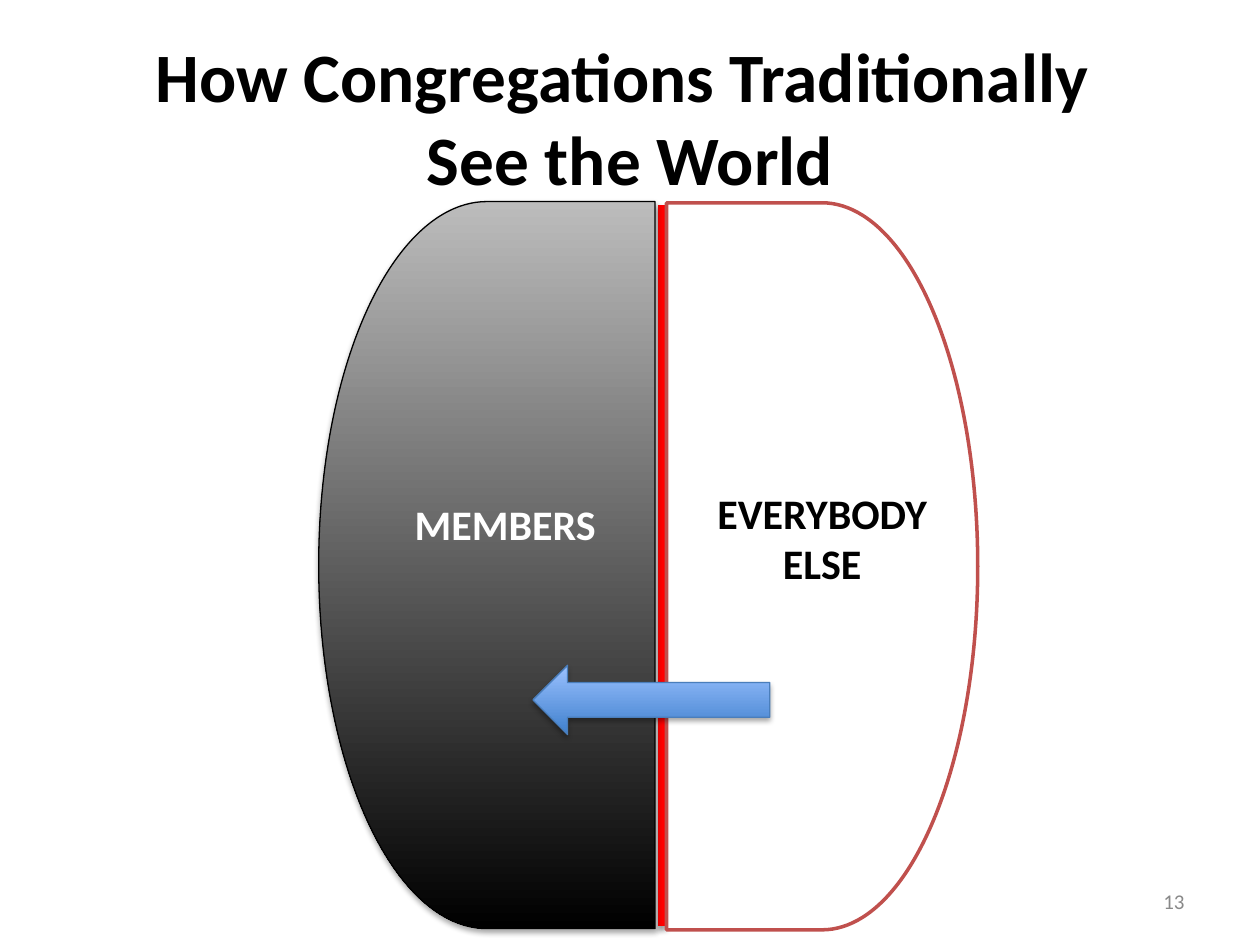
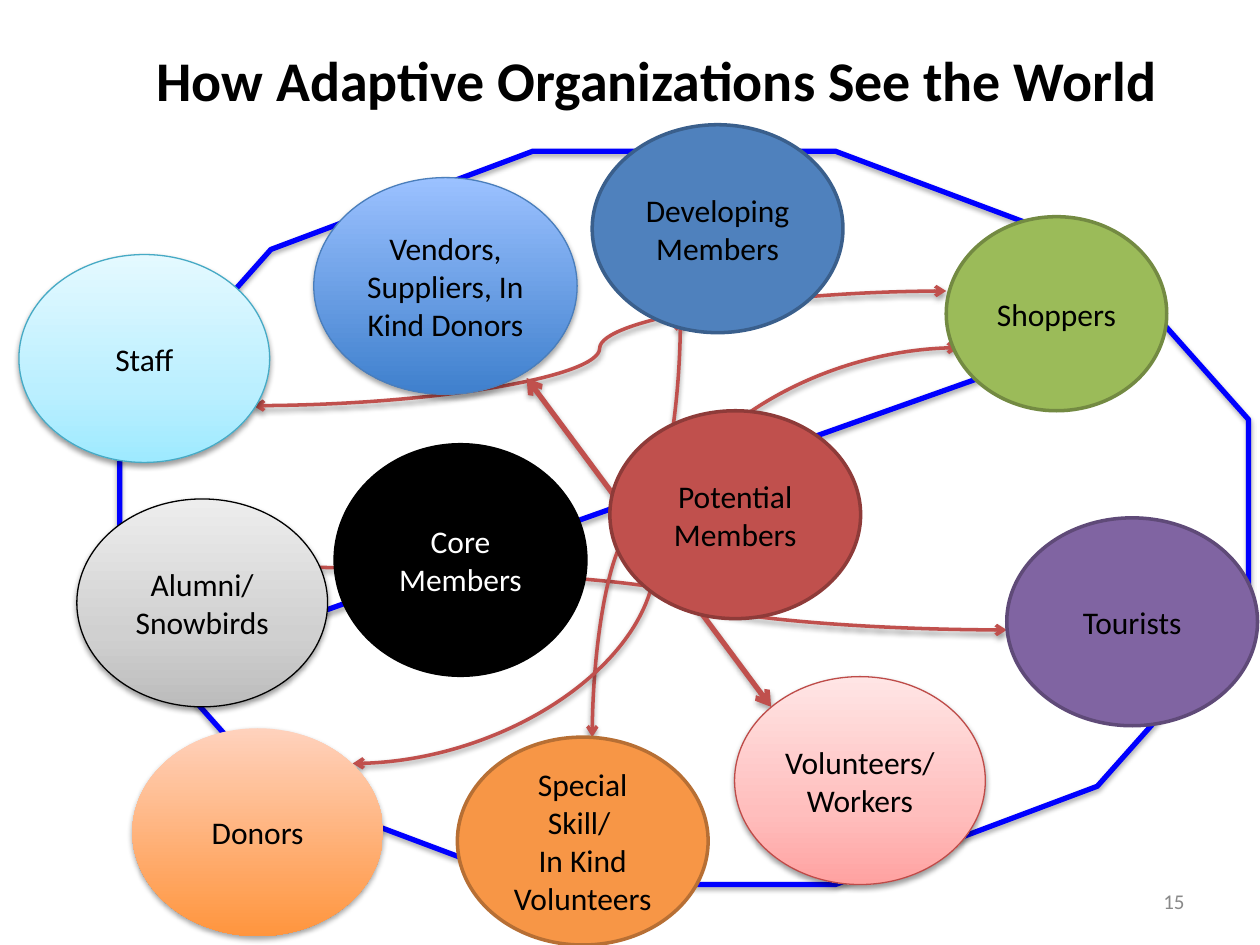
from lxml.etree import SubElement as Sub
from pptx import Presentation
from pptx.dml.color import RGBColor as RGB
from pptx.enum.shapes import MSO_CONNECTOR as Link, MSO_SHAPE as Kind
from pptx.enum.text import MSO_ANCHOR as Anchor, MSO_AUTO_SIZE as Auto, PP_ALIGN as Align
from pptx.oxml.ns import qn
from pptx.util import Inches, Pt

BLACK = RGB(0x00, 0x00, 0x00)
WHITE = RGB(0xFF, 0xFF, 0xFF)
RED = RGB(0xFF, 0x00, 0x00)
BLUE = RGB(0x00, 0x00, 0xFF)
GREY = RGB(0x89, 0x89, 0x89)
SILVER = RGB(0xBC, 0xBC, 0xBC)
BRICK = RGB(0xC0, 0x50, 0x4D)
BRICK_EDGE = RGB(0x8E, 0x3B, 0x39)
STEEL = RGB(0x4F, 0x81, 0xBD)
STEEL_EDGE = RGB(0x3A, 0x5F, 0x8C)
GREEN = RGB(0x9B, 0xBB, 0x59)
GREEN_EDGE = RGB(0x73, 0x8A, 0x42)
PURPLE = RGB(0x80, 0x64, 0xA2)
PURPLE_EDGE = RGB(0x5F, 0x4A, 0x78)
ORANGE = RGB(0xF7, 0x96, 0x46)
ORANGE_EDGE = RGB(0xB7, 0x6F, 0x34)
SKY_EDGE = RGB(0x4A, 0x7E, 0xBB)
AQUA_EDGE = RGB(0x46, 0xAA, 0xC5)
ROSE_EDGE = RGB(0xBE, 0x4B, 0x48)

SKY = [(0, RGB(0x9B, 0xC1, 0xFF)), (100, RGB(0x3F, 0x80, 0xCD))]
NIGHT = [(0, SILVER), (100, BLACK)]
PEACH = [(0, RGB(0xFF, 0xD2, 0xBD)), (100, RGB(0xFF, 0x95, 0x3E))]
ROSE = [(0, RGB(0xFF, 0xE5, 0xE5)), (65, RGB(0xFF, 0xBE, 0xBD)), (100, RGB(0xFF, 0xA2, 0xA1))]
AQUA = [(0, RGB(0xE4, 0xF9, 0xFF)), (65, RGB(0xBB, 0xEF, 0xFF)), (100, RGB(0x9E, 0xEA, 0xFF))]
ASH = [(0, RGB(0xED, 0xED, 0xED)), (65, RGB(0xD0, 0xD0, 0xD0)), (100, SILVER)]

SOFT = (38, 1.6)
FIRM = (35, 1.8)


class Deck:
    """Holds the style and the current slide, and draws each kind of element."""

    font = "Calibri"

    def __init__(self):
        self.show = Presentation()
        self.show.slide_width, self.show.slide_height = Inches(10), Inches(7.5)

    def start(self, title, box, size, number):
        self.slide = self.show.slides.add_slide(self.show.slide_layouts[5])
        head = self.slide.shapes.title
        head.left, head.top, head.width, head.height = map(Inches, box)
        self.letter(head, title, size, bold=True)
        head.text_frame.auto_size = Auto.NONE
        self.label(number, (7.17, 6.95, 2.33, 0.4), 12, GREY, Align.RIGHT, False, Anchor.MIDDLE)

    def letter(self, shape, text, size, color=BLACK, align=Align.CENTER, bold=False, anchor=Anchor.MIDDLE):
        frame = shape.text_frame
        frame.text = text
        frame.word_wrap = True
        frame.vertical_anchor = anchor
        for para in frame.paragraphs:
            para.alignment = align
            for run in para.runs:
                run.font.name, run.font.size, run.font.bold = self.font, Pt(size), bold
                run.font.color.rgb = color

    def label(self, text, box, size, color, align=Align.CENTER, bold=True, anchor=Anchor.TOP):
        self.letter(self.slide.shapes.add_textbox(*map(Inches, box)), text, size, color, align, bold, anchor)

    def shade(self, props, shadow):
        effects = Sub(props, qn("a:effectLst"))
        if shadow:
            alpha, drop = shadow
            outer = Sub(effects, qn("a:outerShdw"), blurRad=str(Pt(3.1)), dist=str(Pt(drop)),
                        dir="5400000", rotWithShape="0")
            tint = Sub(outer, qn("a:srgbClr"), val=str(BLACK))
            Sub(tint, qn("a:alpha"), val=str(alpha * 1000))

    def blend(self, fill, props, stops):
        fill.gradient()
        fill.gradient_angle = 270
        group = props.find(qn("a:gradFill")).find(qn("a:gsLst"))
        for old in list(group):
            group.remove(old)
        for place, color in stops:
            stop = Sub(group, qn("a:gs"), pos=str(place * 1000))
            Sub(stop, qn("a:srgbClr"), val=str(color))

    def shape(self, kind, box, fill=None, edge=None, width=2, shadow=None, flip=False):
        item = self.slide.shapes.add_shape(kind, *map(Inches, box))
        props = item._element.spPr
        if fill is None:
            item.fill.background()
        elif isinstance(fill, list):
            self.blend(item.fill, props, fill)
        else:
            item.fill.solid()
            item.fill.fore_color.rgb = fill
        if edge is None:
            item.line.fill.background()
        else:
            item.line.color.rgb, item.line.width = edge, Pt(width)
        if flip:
            props.find(qn("a:xfrm")).set("flipH", "1")
        self.shade(props, shadow)
        return item

    def oval(self, text, box, fill, edge=None, width=2, shadow=None, color=BLACK):
        self.letter(self.shape(Kind.OVAL, box, fill, edge, width, shadow), text, 18, color)

    def line(self, ends, color, width, shadow=SOFT, kind=Link.STRAIGHT, arrows=False, bend=None, turn=0):
        item = self.slide.shapes.add_connector(kind, *map(Inches, ends))
        item.line.color.rgb, item.line.width = color, Pt(width)
        props = item._element.spPr
        if arrows:
            for tip in ("a:headEnd", "a:tailEnd"):
                Sub(props.find(qn("a:ln")), qn(tip), type="arrow")
        if bend:
            shape = props.find(qn("a:prstGeom"))
            guides = shape.find(qn("a:avLst"))
            if guides is None:
                guides = Sub(shape, qn("a:avLst"))
            Sub(guides, qn("a:gd"), name="adj1", fmla=f"val {bend}")
        if turn:
            props.find(qn("a:xfrm")).set("rot", str(turn * 60000))
        self.shade(props, shadow)


def halves(deck):
    deck.start("How Congregations Traditionally \vSee the World", (0.5, 0.3, 9, 1.25), 39.6, "13")
    deck.line((5.25, 1.63, 5.25, 7.35), RED, 4.5)
    deck.shape(Kind.FLOWCHART_DELAY, (5.29, 1.61, 2.47, 5.77), WHITE, BRICK)
    deck.shape(Kind.FLOWCHART_DELAY, (2.53, 1.6, 2.67, 5.77), NIGHT, BLACK, 0.75, FIRM, flip=True)
    deck.shape(Kind.LEFT_ARROW, (4.23, 5.28, 1.88, 0.55), SKY, SKY_EDGE, 0.75, FIRM)
    deck.label("MEMBERS", (3.08, 3.91, 1.86, 0.5), 24, WHITE)
    deck.label("EVERYBODY ELSE", (5.48, 3.82, 2.09, 0.91), 24, BLACK)


def network(deck):
    deck.start("How Adaptive Organizations See the World", (0.31, 0, 9.81, 1.25), 32, "15")
    deck.shape(Kind.DODECAGON, (0.95, 1.2, 8.96, 5.82), None, BLUE, 3, FIRM)
    deck.line((1.89, 5.09, 8.45, 2.76), BLUE, 3)
    for ends, bend, turn in (
        ((2.01, 4.5, 7.99, 5), 57900, 0),
        ((2.01, 3.22, 7.51, 2.31), None, 0),
        ((3.39, 3.84, 6.71, 4.54), None, 90),
        ((7.61, 2.76, 2.8, 6.06), None, 0),
    ):
        deck.line(ends, BRICK, 2, kind=Link.CURVE, arrows=True, bend=bend, turn=turn)
    deck.line((4.18, 3, 6.12, 5.61), BRICK, 3, FIRM, arrows=True)

    size = (1.99, 1.65)
    deck.oval("Core Members", (2.66, 3.53, 1.99, 1.83), BLACK, BLACK, color=WHITE)
    deck.oval("Donors", (1.05, 5.78, *size), PEACH, shadow=FIRM)
    deck.oval("Volunteers/Workers", (5.83, 5.37, *size), ROSE, ROSE_EDGE, 0.75, SOFT)
    deck.oval("Tourists", (7.99, 4.11, *size), PURPLE, PURPLE_EDGE)
    deck.oval("Special Skill/ \nIn Kind Volunteers", (3.63, 5.85, *size), ORANGE, ORANGE_EDGE)
    deck.oval("Potential Members", (4.84, 3.26, *size), BRICK, BRICK_EDGE)
    deck.oval("Staff", (0.15, 2.02, *size), AQUA, AQUA_EDGE, 0.75, SOFT)
    deck.oval("Developing Members", (4.7, 0.99, *size), STEEL, STEEL_EDGE)
    deck.oval("Shoppers", (7.51, 1.72, 1.75, 1.54), GREEN, GREEN_EDGE)
    deck.oval("Alumni/\nSnowbirds", (0.61, 3.96, *size), ASH, BLACK, 0.75, SOFT)
    deck.oval("Vendors, Suppliers, In Kind Donors", (2.49, 1.41, 2.09, 1.72), SKY, SKY_EDGE, 0.75, FIRM)


def main():
    deck = Deck()
    halves(deck)
    network(deck)
    deck.show.save("out.pptx")


if __name__ == "__main__":
    main()
